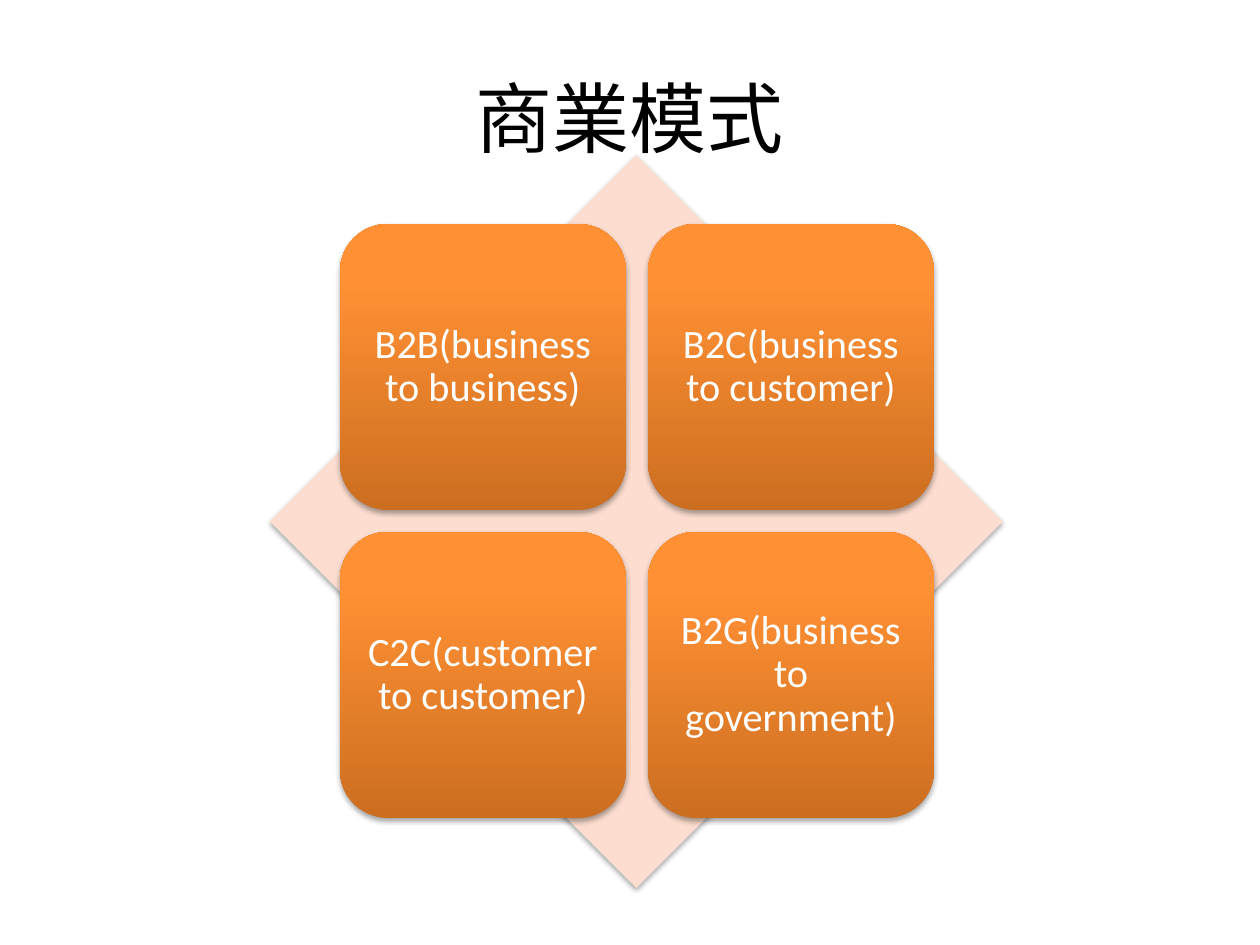
import copy
from lxml import etree
from pptx import Presentation, util as u
from pptx.dml.color import RGBColor
from pptx.enum import shapes, text
from pptx.oxml import parse_xml
from pptx.oxml.ns import nsdecls, qn

PX = 914400 / 126
COLORS = {"title": "000000", "diamond": "FCDDCF", "label": "FFFFFF",
          "dark": "CC6E20", "mid": "FF9034", "light": "FF9136", "shadow": "000000"}


def add_soft_shape(kind, *box):
    """Add a borderless shape with a soft shadow below; box is in px."""
    sp = s.shapes.add_shape(kind, *[round(v * PX) for v in box])
    sp.line.fill.background()
    sp.shadow.inherit = False
    sp._element.spPr.find(qn("a:effectLst")).append(parse_xml(
        f'<a:outerShdw {nsdecls("a")} blurRad="40000" dist="23000" dir="5400000" rotWithShape="0">'
        f'<a:srgbClr val="{COLORS["shadow"]}"><a:alpha val="35000"/></a:srgbClr></a:outerShdw>'))
    return sp


def set_text(sp, words, font, size, color):
    tf = sp.text_frame
    tf.word_wrap = True
    tf.vertical_anchor = text.MSO_ANCHOR.MIDDLE
    tf.text = words
    p = tf.paragraphs[0]
    p.alignment = text.PP_ALIGN.CENTER
    r = p.runs[0]
    r.font.name = font
    r.font.size = u.Pt(size)
    r.font.color.rgb = RGBColor.from_string(COLORS[color])
    etree.SubElement(r.font._element, qn("a:ea")).set("typeface", font)
    return tf


prs = Presentation()
prs.slide_width, prs.slide_height = round(1260 * PX), round(945 * PX)
s = prs.slides.add_slide(prs.slide_layouts[6])

title = s.shapes.add_textbox(*[round(v * PX) for v in (63, 38, 1134, 157)])
set_text(title, "商業模式", "Noto Sans CJK SC", 44, "title")

diamond = add_soft_shape(shapes.MSO_SHAPE.DIAMOND, 270, 155, 733, 733)
diamond.fill.solid()
diamond.fill.fore_color.rgb = RGBColor.from_string(COLORS["diamond"])

models = ["B2B(business to business)", "B2C(business to customer)",
          "C2C(customer to customer)", "B2G(business to government)"]
left, top, size, pitch = 340, 224, 286, 308
for i, model in enumerate(models):
    row, col = divmod(i, 2)
    tile = add_soft_shape(shapes.MSO_SHAPE.ROUNDED_RECTANGLE,
                          left + col * pitch, top + row * pitch, size, size)
    tile.fill.gradient()
    tile.fill.gradient_angle = 90
    stop_list = tile._element.spPr.find(qn("a:gradFill")).find(qn("a:gsLst"))
    stop_list.append(copy.deepcopy(stop_list[-1]))
    for stop, position, name in zip(tile.fill.gradient_stops, (0, 0.8, 1), ("dark", "mid", "light")):
        stop.position = position
        stop.color.rgb = RGBColor.from_string(COLORS[name])
    tf = set_text(tile, model, "Calibri", 23, "label")
    tf.margin_left = tf.margin_right = tf.margin_top = tf.margin_bottom = round(12 * PX)
    tf.paragraphs[0].line_spacing = 0.9

prs.save("out.pptx")
